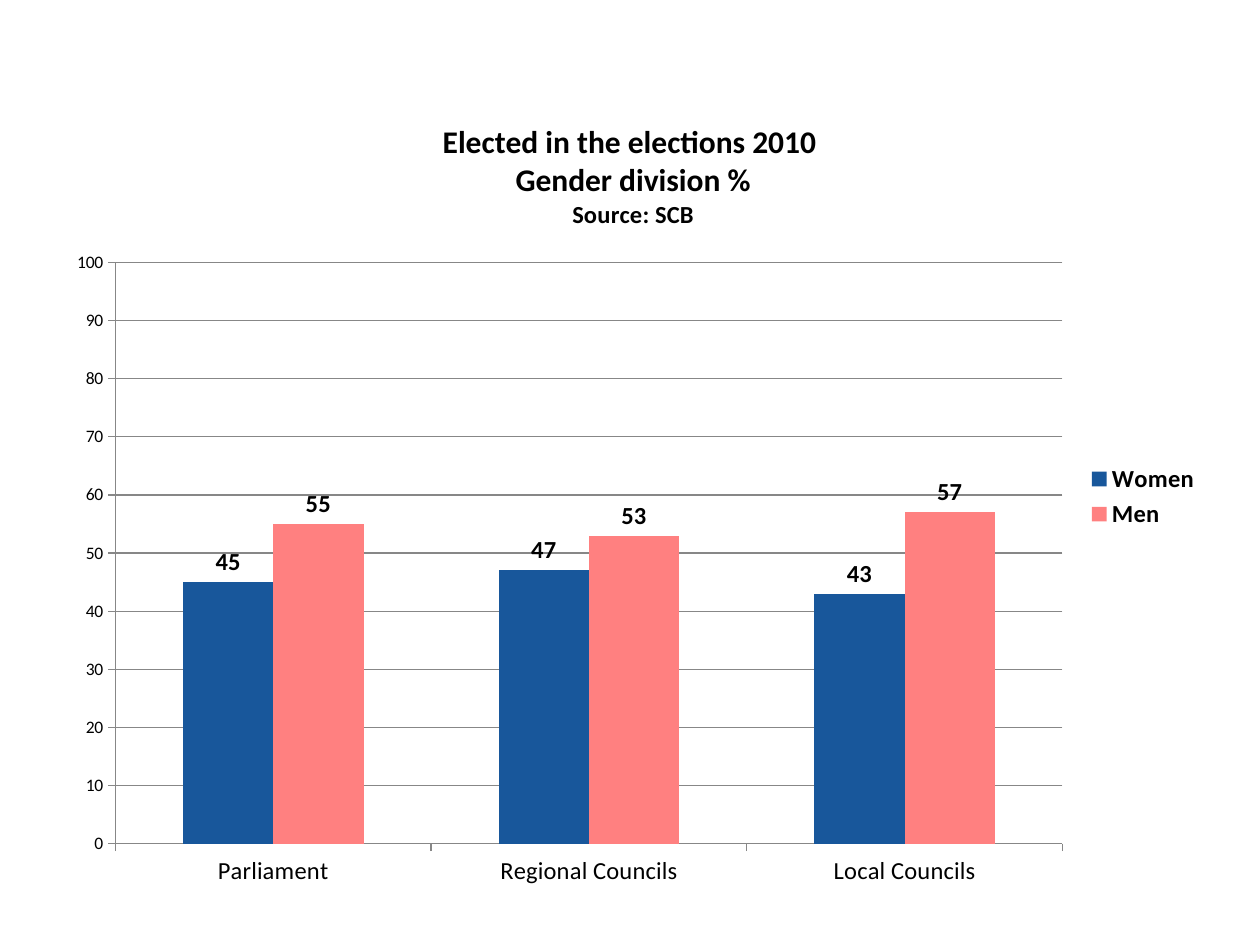
from pptx import Presentation
from pptx import util as u
from pptx.chart.data import CategoryChartData
from pptx.dml.color import RGBColor
from pptx.enum import chart as ch
from pptx.oxml import parse_xml
from pptx.oxml.ns import nsdecls, qn

BLACK, GREY = "000000", "878787"
COUNCILS = ["Parliament", "Regional Councils", "Local Councils"]
GENDERS = [("Women", [45, 47, 43], "18579B"), ("Men", [55, 53, 57], "FF8080")]
TITLE_LINES = [("Elected in the elections 2010 ", 18), ("Gender division %", 18), ("Source: SCB", 14)]


def rgb(value):
    return RGBColor.from_string(value)


def set_font(font, size, bold=False):
    font.name, font.size, font.bold = "Calibri", u.Pt(size), bold
    font.color.rgb = rgb(BLACK)


def set_line(line):
    line.color.rgb = rgb(GREY)
    line.width = u.Pt(0.75)


def place(parent, index, **fractions):
    """Give a chart part a fixed position, in fractions of the chart area."""
    for old in parent.findall(qn("c:layout")):
        parent.remove(old)
    target = '<c:layoutTarget val="inner"/>' if "w" in fractions else ""
    modes = "".join(f'<c:{key}Mode val="edge"/>' for key in "xy")
    values = "".join(f'<c:{key} val="{value}"/>' for key, value in fractions.items())
    parent.insert(index, parse_xml(
        f'<c:layout {nsdecls("c")}><c:manualLayout>{target}{modes}{values}'
        "</c:manualLayout></c:layout>"))


def add_gender_chart(slide):
    data = CategoryChartData(number_format="0")
    data.categories = COUNCILS
    for name, shares, _ in GENDERS:
        data.add_series(name, shares)
    frame = slide.shapes.add_chart(
        ch.XL_CHART_TYPE.COLUMN_CLUSTERED,
        u.Pt(33), u.Pt(53), u.Pt(660), u.Pt(461.5), data)
    set_font(frame.chart.font, 10)
    return frame.chart


def write_title(chart):
    title = chart.chart_title
    frame = title.text_frame
    for number, (line, size) in enumerate(TITLE_LINES):
        paragraph = frame.add_paragraph() if number else frame.paragraphs[0]
        run = paragraph.add_run()
        run.text = line
        set_font(run.font, size, True)
    title.include_in_layout = False
    place(title._element, 1, x=0.33, y=0.03)


def style_axes(chart):
    for axis, size in ((chart.category_axis, 14), (chart.value_axis, 10)):
        set_font(axis.tick_labels.font, size)
        set_line(axis.format.line)
        axis.major_tick_mark = ch.XL_TICK_MARK.OUTSIDE
        axis.minor_tick_mark = ch.XL_TICK_MARK.NONE
    shares = chart.value_axis
    shares.minimum_scale, shares.maximum_scale, shares.major_unit = 0, 100, 10
    shares.has_major_gridlines = True
    set_line(shares.major_gridlines.format.line)


def style_columns(chart):
    plot = chart.plots[0]
    plot.vary_by_categories = False
    plot.gap_width, plot.overlap = 150, 0
    for series, (_, _, color) in zip(plot.series, GENDERS):
        series.format.fill.solid()
        series.format.fill.fore_color.rgb = rgb(color)
        labels = series.data_labels
        labels.show_value = True
        labels.position = ch.XL_LABEL_POSITION.OUTSIDE_END
        set_font(labels.font, 14, True)
    plot_area = chart._chartSpace.chart.plotArea
    place(plot_area, 0, x=0.05, y=0.21, w=0.82, h=0.72)


def add_legend(chart):
    chart.has_legend = True
    chart.legend.position = ch.XL_LEGEND_POSITION.RIGHT
    chart.legend.include_in_layout = False
    set_font(chart.legend.font, 14, True)


def main():
    deck = Presentation()
    deck.slide_width, deck.slide_height = u.Pt(720), u.Pt(540)
    slide = deck.slides.add_slide(deck.slide_layouts[6])
    chart = add_gender_chart(slide)
    write_title(chart)
    style_axes(chart)
    style_columns(chart)
    add_legend(chart)
    deck.save("out.pptx")


if __name__ == "__main__":
    main()
